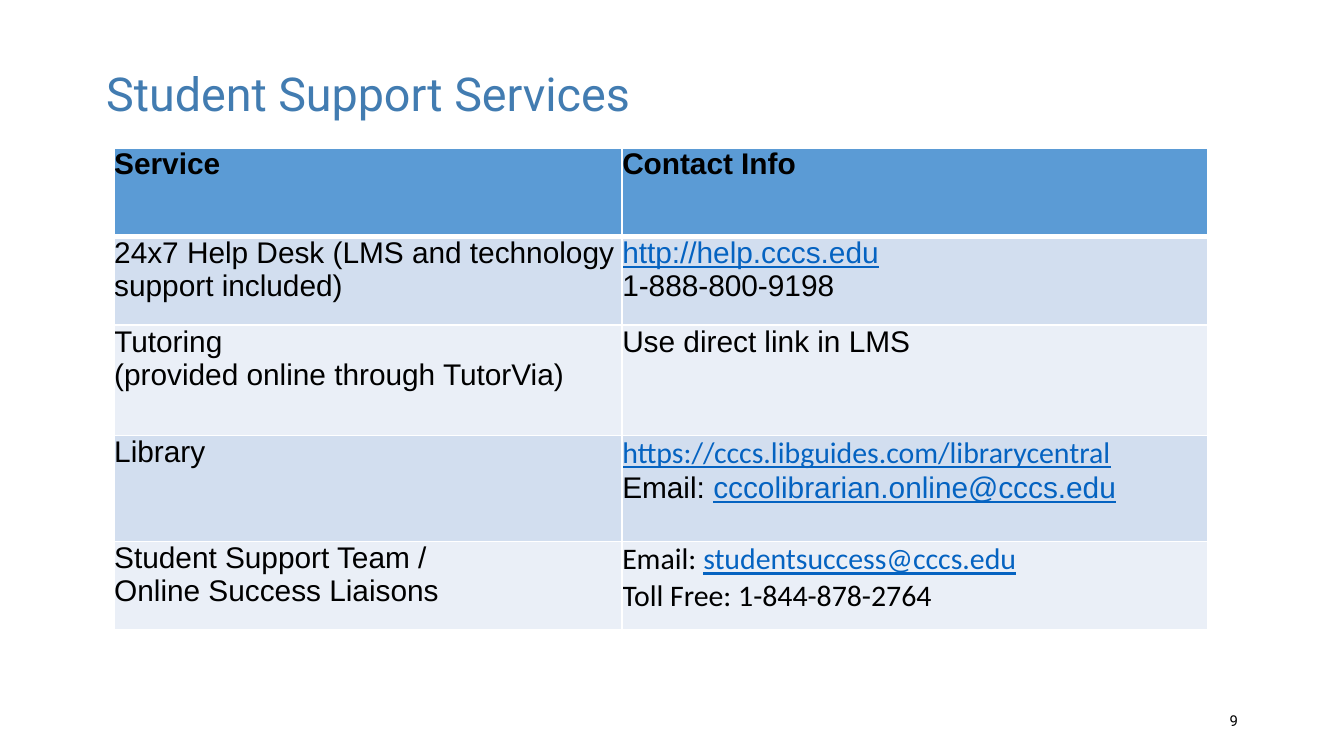
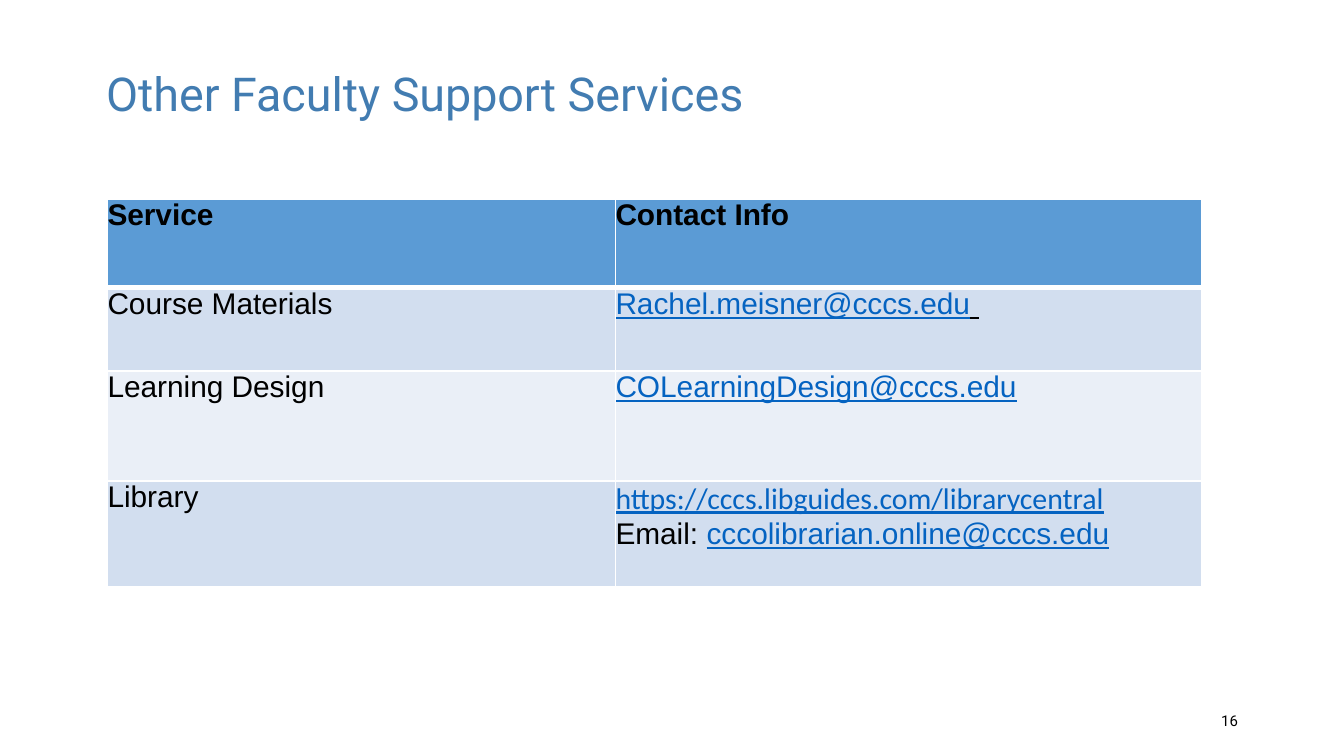
import pptx
import pptx.util
import pptx.dml.color
import pptx.enum.text
import pptx.oxml.ns
import lxml.etree

Inches = pptx.util.Inches
Pt = pptx.util.Pt
Align = pptx.enum.text.PP_ALIGN
Anchor = pptx.enum.text.MSO_ANCHOR

COLORS = {
    "title": "427CB1",
    "text": "000000",
    "link": "0563C1",
    "header": "5B9BD5",
    "odd": "D2DEEF",
    "even": "EAEFF7",
    "border": "FFFFFF",
}
LINK = {"color": "link", "underline": True}
CALIBRI = {"font": "Calibri"}
CALIBRI_LINK = {**LINK, **CALIBRI}

# Content: a cell is a list of paragraphs, a paragraph a list of (text, format)
HEADER = ([[("Service", {"bold": True})]], [[("Contact Info", {"bold": True})]])
LIBRARY = (
    [[("Library", {})]],
    [
        [("https://cccs.libguides.com/librarycentral", CALIBRI_LINK)],
        [("Email: ", {}), ("cccolibrarian.online@cccs.edu", LINK)],
    ],
)
SLIDES = [
    {
        "title": "Student Support Services",
        "number": "9",
        "corner": (0.85, 1.1),
        "heights": (0.66, 0.66, 0.82, 0.79, 0.66),
        "rows": [
            HEADER,
            (
                [[("24x7 Help Desk (LMS and technology support included)", {})]],
                [[("http://help.cccs.edu", LINK)], [("1-888-800-9198", {})]],
            ),
            (
                [[("Tutoring\n(provided online through TutorVia)", {})]],
                [[("Use direct link in LMS", {})]],
            ),
            LIBRARY,
            (
                [[("Student Support Team /\nOnline Success Liaisons", {})]],
                [
                    [("Email: ", CALIBRI), ("studentsuccess@cccs.edu", CALIBRI_LINK)],
                    [("Toll Free: 1-844-878-2764", CALIBRI)],
                ],
            ),
        ],
    },
    {
        "title": "Other Faculty Support Services",
        "number": "16",
        "corner": (0.8, 1.48),
        "heights": (0.66, 0.62, 0.82, 0.79),
        "rows": [
            HEADER,
            (
                [[("Course Materials", {})]],
                [[("Rachel.meisner@cccs.edu", LINK), (" ", {"underline": True})]],
            ),
            ([[("Learning Design", {})]], [[("COLearningDesign@cccs.edu", LINK)]]),
            LIBRARY,
        ],
    },
]
COLUMN_WIDTHS = (3.78, 4.36)


def rgb(name):
    return pptx.dml.color.RGBColor.from_string(COLORS[name])


def add_text(para, text, size=16, font="Arial", color="text", bold=False, underline=False):
    """Add formatted text to a paragraph; a newline becomes a line break."""
    for index, line in enumerate(text.split("\n")):
        if index:
            para.add_line_break()
        span = para.add_run()
        span.text = line
        span.font.size = Pt(size)
        span.font.name = font
        span.font.bold = bold
        span.font.underline = underline
        span.font.color.rgb = rgb(color)


def set_borders(cell, **widths):
    """Draw the four cell borders, 1 point wide unless a side is given."""
    properties = cell._tc.get_or_add_tcPr()
    qn = pptx.oxml.ns.qn
    for side in ("L", "R", "T", "B"):
        line = lxml.etree.SubElement(
            properties, qn("a:ln" + side), w=str(Pt(widths.get(side, 1)))
        )
        fill = lxml.etree.SubElement(line, qn("a:solidFill"))
        lxml.etree.SubElement(fill, qn("a:srgbClr"), val=COLORS["border"])


def fill_cell(cell, paragraphs, row_index):
    cell.margin_left = cell.margin_right = cell.margin_top = cell.margin_bottom = 0
    set_borders(cell, **{0: {"B": 3}, 1: {"T": 3}}.get(row_index, {}))
    band = "header" if row_index == 0 else ("even", "odd")[row_index % 2]
    cell.fill.solid()
    cell.fill.fore_color.rgb = rgb(band)
    frame = cell.text_frame
    for index, spans in enumerate(paragraphs):
        para = frame.add_paragraph() if index else frame.paragraphs[0]
        for text, style in spans:
            add_text(para, text, **style)


def add_title(page, text):
    box = page.shapes.title
    box.left, box.top, box.width, box.height = map(Inches, (0.69, 0.3, 8.62, 0.84))
    frame = box.text_frame
    frame.auto_size = pptx.enum.text.MSO_AUTO_SIZE.NONE
    frame.vertical_anchor = Anchor.MIDDLE
    para = frame.paragraphs[0]
    para.alignment = Align.LEFT
    para.line_spacing = 0.9
    add_text(para, text, size=25, font="Roboto", color="title")


def add_services(page, content):
    rows, heights = content["rows"], content["heights"]
    left, top = content["corner"]
    table = page.shapes.add_table(
        len(rows), len(COLUMN_WIDTHS), Inches(left), Inches(top),
        Inches(sum(COLUMN_WIDTHS)), Inches(sum(heights)),
    ).table
    for column, width in zip(table.columns, COLUMN_WIDTHS):
        column.width = Inches(width)
    for row_index, (cells, height) in enumerate(zip(rows, heights)):
        table.rows[row_index].height = Inches(height)
        for column_index, paragraphs in enumerate(cells):
            fill_cell(table.cell(row_index, column_index), paragraphs, row_index)


def add_page_number(page, number):
    box = page.shapes.add_textbox(*map(Inches, (7.06, 5.21, 2.25, 0.3)))
    frame = box.text_frame
    frame.word_wrap = True
    frame.vertical_anchor = Anchor.MIDDLE
    para = frame.paragraphs[0]
    para.alignment = Align.RIGHT
    add_text(para, number, size=8, font="Roboto")


def main():
    deck = pptx.Presentation()
    # Widescreen page, 16 by 9
    deck.slide_width = Inches(10)
    deck.slide_height = deck.slide_width * 9 // 16
    for content in SLIDES:
        page = deck.slides.add_slide(deck.slide_layouts.get_by_name("Title Only"))
        add_title(page, content["title"])
        add_services(page, content)
        add_page_number(page, content["number"])
    deck.save("out.pptx")


if __name__ == "__main__":
    main()
